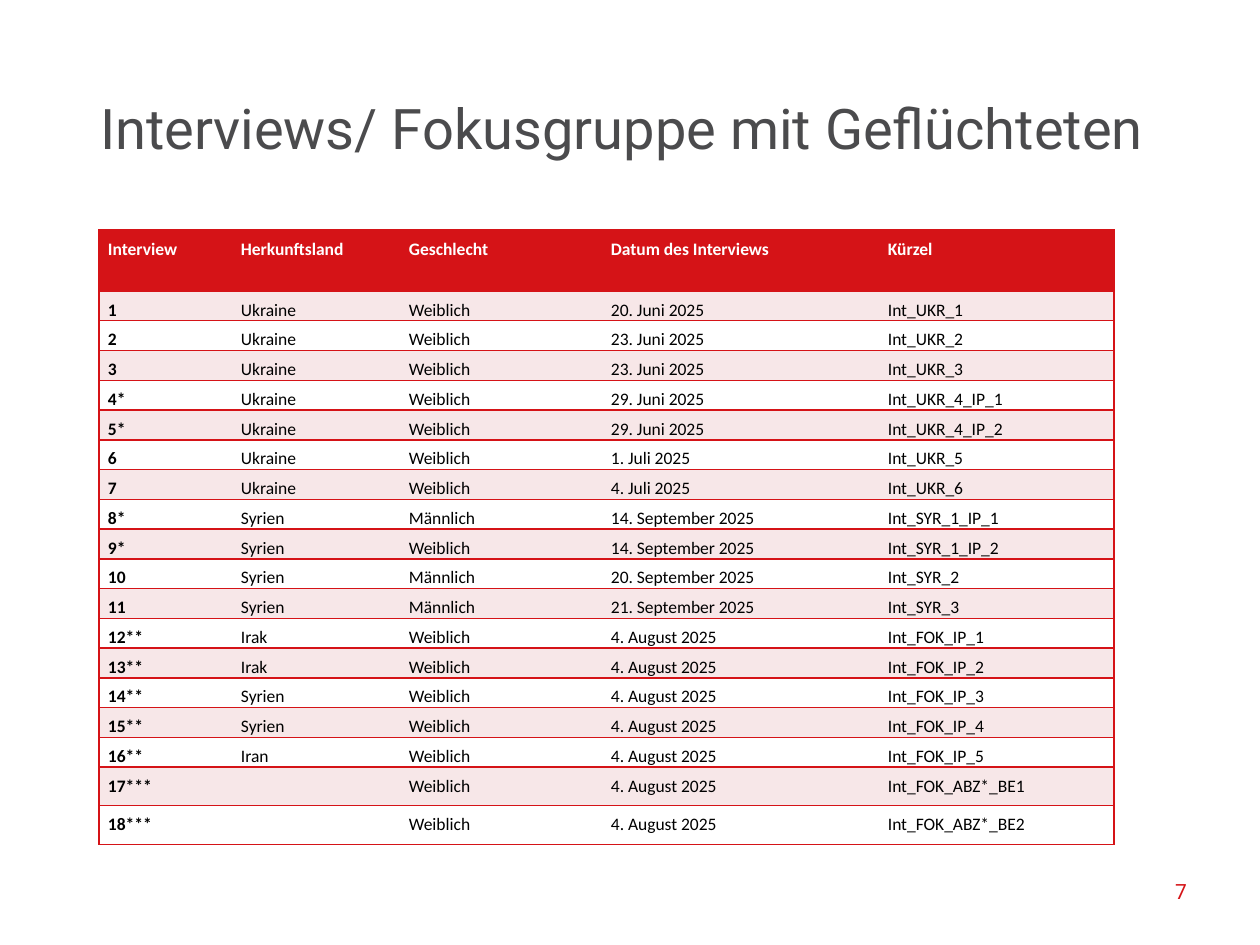
from lxml import etree
from pptx import Presentation
from pptx import util as u
from pptx.dml.color import RGBColor
from pptx.enum import text
from pptx.oxml import ns

PX = 914400 / 126
RED, PINK, WHITE, BLACK, GREY = "D51317", "F7E7E8", "FFFFFF", "000000", "4B4B4D"
PLAIN_TABLE = "{2D5ABB26-0587-4C30-8999-92F81FD0307C}"


def px(n):
    return u.Emu(round(n * PX))


def rgb(value):
    return RGBColor.from_string(value)


class Deck:
    heading_font, body_font = "Roboto", "Calibri"

    def __init__(self, width, height):
        self.prs = Presentation()
        self.prs.slide_width, self.prs.slide_height = px(width), px(height)
        self.s = self.prs.slides.add_slide(self.prs.slide_layouts[5])

    def run(self, p, words, size, color, font, bold=False):
        r = p.add_run()
        r.text = words
        r.font.size, r.font.name, r.font.bold = u.Pt(size), font, bold
        r.font.color.rgb = rgb(color)

    def frame(self, tf, anchor):
        tf.margin_left = tf.margin_top = tf.margin_right = tf.margin_bottom = 0
        tf.word_wrap = True
        tf.auto_size = text.MSO_AUTO_SIZE.NONE
        tf.vertical_anchor = anchor
        return tf.paragraphs[0]

    def title(self, x, y, w, h, words):
        sp = self.s.shapes.title
        sp.left, sp.top, sp.width, sp.height = map(px, (x, y, w, h))
        p = self.frame(sp.text_frame, text.MSO_ANCHOR.TOP)
        p.alignment = text.PP_ALIGN.LEFT
        self.run(p, words, 32, GREY, self.heading_font)

    def page_number(self, x, y, w, h, words):
        sp = self.s.shapes.add_textbox(*map(px, (x, y, w, h)))
        p = self.frame(sp.text_frame, text.MSO_ANCHOR.BOTTOM)
        p.alignment, p.line_spacing = text.PP_ALIGN.RIGHT, 0.9
        self.run(p, words, 12, RED, self.heading_font)

    def border(self, cell, sides):
        tcPr = cell._tc.get_or_add_tcPr()
        for i, side in enumerate(sides):
            ln = etree.Element(ns.qn(f"a:ln{side}"), w=str(u.Pt(1)))
            fill = etree.SubElement(ln, ns.qn("a:solidFill"))
            etree.SubElement(fill, ns.qn("a:srgbClr"), val=RED)
            tcPr.insert(i, ln)

    def cell(self, cell, words, fill, color, bold, sides):
        cell.margin_left = cell.margin_right = px(9)
        cell.margin_top = cell.margin_bottom = 0
        cell.fill.solid()
        cell.fill.fore_color.rgb = rgb(fill)
        self.border(cell, sides)
        if words:
            p = cell.text_frame.paragraphs[0]
            p.line_spacing, p.space_after = 1.4, u.Pt(8)
            self.run(p, words, 10, color, self.body_font, bold)

    def table(self, x, y, widths, heights, rows):
        sp = self.s.shapes.add_table(len(rows), len(widths), px(x), px(y),
                                     px(sum(widths)), px(sum(heights)))
        tbl = sp.table
        sp._element.find(".//" + ns.qn("a:tableStyleId")).text = PLAIN_TABLE
        tbl.horz_banding = False
        for column, width in zip(tbl.columns, widths):
            column.width = px(width)
        last = len(widths) - 1
        for i, (row, height) in enumerate(zip(rows, heights)):
            tbl.rows[i].height = px(height)
            fill = RED if i == 0 else PINK if i % 2 else WHITE
            for j, words in enumerate(row):
                sides = "L" * (j == 0) + "R" * (j == last) + "TB"
                self.cell(tbl.cell(i, j), words, fill, BLACK if i else WHITE,
                          i == 0 or j == 0, sides)


HEADER = ("Interview", "Herkunftsland", "Geschlecht", "Datum des Interviews", "Kürzel")
W, M = "Weiblich", "Männlich"
FOCUS_DAY = "4. August 2025"
INTERVIEWS = [
    ("1", "Ukraine", W, "20. Juni 2025", "Int_UKR_1"),
    ("2", "Ukraine", W, "23. Juni 2025", "Int_UKR_2"),
    ("3", "Ukraine", W, "23. Juni 2025", "Int_UKR_3"),
    ("4*", "Ukraine", W, "29. Juni 2025", "Int_UKR_4_IP_1"),
    ("5*", "Ukraine", W, "29. Juni 2025", "Int_UKR_4_IP_2"),
    ("6", "Ukraine", W, "1. Juli 2025", "Int_UKR_5"),
    ("7", "Ukraine", W, "4. Juli 2025", "Int_UKR_6"),
    ("8*", "Syrien", M, "14. September 2025", "Int_SYR_1_IP_1"),
    ("9*", "Syrien", W, "14. September 2025", "Int_SYR_1_IP_2"),
    ("10", "Syrien", M, "20. September 2025", "Int_SYR_2"),
    ("11", "Syrien", M, "21. September 2025", "Int_SYR_3"),
    ("12**", "Irak", W, FOCUS_DAY, "Int_FOK_IP_1"),
    ("13**", "Irak", W, FOCUS_DAY, "Int_FOK_IP_2"),
    ("14**", "Syrien", W, FOCUS_DAY, "Int_FOK_IP_3"),
    ("15**", "Syrien", W, FOCUS_DAY, "Int_FOK_IP_4"),
    ("16**", "Iran", W, FOCUS_DAY, "Int_FOK_IP_5"),
    ("17***", "", W, FOCUS_DAY, "Int_FOK_ABZ*_BE1"),
    ("18***", "", W, FOCUS_DAY, "Int_FOK_ABZ*_BE2"),
]


def main():
    deck = Deck(1260, 945)
    # Heading
    deck.title(100, 93, 1111, 93, "Interviews/ Fokusgruppe mit Geflüchteten")
    # Interview list
    deck.table(99, 230, [133, 168, 202, 277, 235], [61] + [29] * 16 + [38, 39],
               [HEADER] + INTERVIEWS)
    # Page number
    deck.page_number(1013, 879, 174, 25, "7")
    deck.prs.save("out.pptx")


if __name__ == "__main__":
    main()
